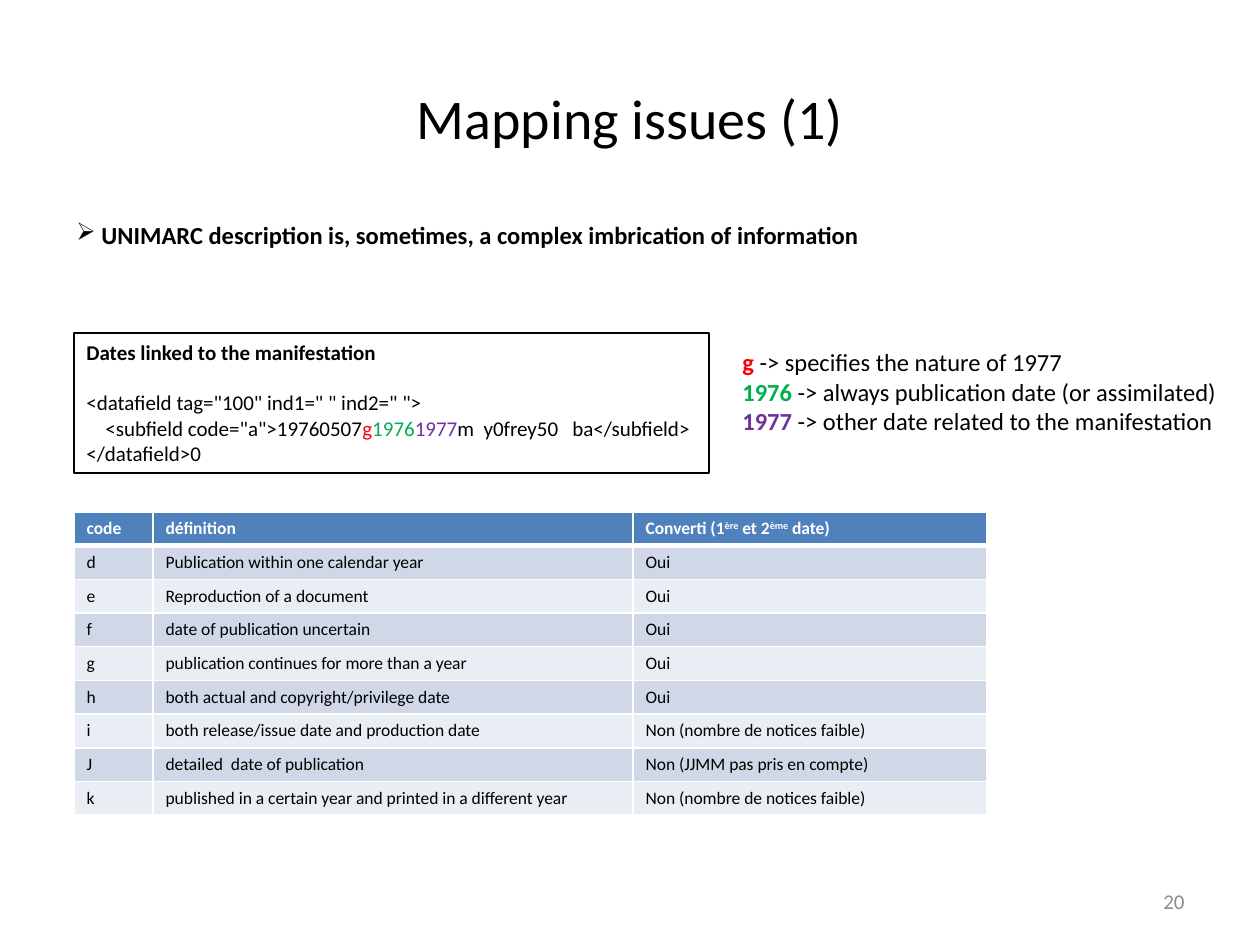
from dataclasses import dataclass

from lxml.etree import SubElement
from pptx import Presentation
from pptx.dml.color import RGBColor as RGB
from pptx.enum.shapes import MSO_SHAPE as Shape
from pptx.enum.text import MSO_ANCHOR as Anchor, PP_ALIGN as Align
from pptx.oxml.ns import qn
from pptx.util import Pt

PX = 914400 // 126


@dataclass(frozen=True)
class Theme:
    font: str = "Calibri"
    black: str = "000000"
    white: str = "FFFFFF"
    grey: str = "8C8C8C"
    red: str = "FF0000"
    green: str = "00B050"
    purple: str = "7030A0"
    header: str = "4F81BD"
    bands: tuple = ("D0D8E8", "E9EDF4")
    title: int = 32
    body: int = 14
    code: int = 12
    cell: int = 10


THEME = Theme()

DATE_CODES = [
    ("d", "Publication within one calendar year", "Oui"),
    ("e", "Reproduction of a document", "Oui"),
    ("f", "date of publication uncertain", "Oui"),
    ("g", "publication continues for more than a year", "Oui"),
    ("h", "both actual and copyright/privilege date", "Oui"),
    ("i", "both release/issue date and production date", "Non (nombre de notices faible)"),
    ("J", "detailed  date of publication", "Non (JJMM pas pris en compte)"),
    ("k", "published in a certain year and printed in a different year",
     "Non (nombre de notices faible)"),
]


def emu(box):
    return [length * PX for length in box]


def set_font(paragraph, size, color=THEME.black, bold=False):
    font = paragraph.font
    font.name, font.size, font.bold = THEME.font, Pt(size), bold
    font.color.rgb = RGB.from_string(color)


def add_runs(paragraph, runs):
    """Add (text, color, bold) runs; None keeps the paragraph's setting."""
    for text, color, bold in runs:
        run = paragraph.add_run()
        run.text = text
        run.font.bold = bold
        if color:
            run.font.color.rgb = RGB.from_string(color)


def add_paragraph(frame, first):
    return frame.paragraphs[0] if first else frame.add_paragraph()


def set_indent(paragraph, left, first=0):
    props = paragraph._p.get_or_add_pPr()
    props.set("marL", str(left * PX))
    props.set("indent", str(first * PX))
    return props


def add_line(slide, box, text, size, color=THEME.black, align=Align.LEFT,
             bold=False, anchor=Anchor.MIDDLE):
    frame = slide.shapes.add_textbox(*emu(box)).text_frame
    frame.word_wrap = True
    frame.vertical_anchor = anchor
    line = frame.paragraphs[0]
    line.text, line.alignment = text, align
    set_font(line, size, color, bold)
    return line


def add_statement(slide, box):
    statement = add_line(
        slide, box, "UNIMARC description is, sometimes, a complex imbrication of information",
        THEME.body, bold=True, anchor=Anchor.TOP)
    statement.space_before = Pt(6)
    bullet = SubElement(set_indent(statement, 25, -25), qn("a:buChar"))
    bullet.set("char", "➢")


def add_record(slide, box):
    record = slide.shapes.add_shape(Shape.RECTANGLE, *emu(box))
    record.shadow.inherit = False
    record.fill.background()
    record.line.color.rgb = RGB.from_string(THEME.black)
    record.line.width = Pt(0.75)
    frame = record.text_frame
    frame.word_wrap = True
    frame.vertical_anchor = Anchor.TOP
    lines = [
        [("Dates linked to the manifestation", None, True)],
        [('<datafield tag="100" ind1=" " ind2=" ">', None, None)],
        [('<subfield code="a">19760507', None, None), ("g", THEME.red, None),
         ("1976", THEME.green, None), ("1977", THEME.purple, None),
         ("m  y0frey50   ba</subfield>", None, None)],
        [("</datafield>0", None, None)],
    ]
    for index, runs in enumerate(lines):
        line = add_paragraph(frame, index == 0)
        line.alignment = Align.LEFT
        set_font(line, THEME.code)
        add_runs(line, runs)
    heading, datafield, subfield, _ = frame.paragraphs
    datafield.space_before = Pt(14.6)  # one line below the heading
    set_indent(subfield, 19)


def add_legend(slide, box):
    frame = slide.shapes.add_textbox(*emu(box)).text_frame
    frame.word_wrap = False
    meanings = [
        ("g", THEME.red, "specifies the nature of 1977"),
        ("1976", THEME.green, "always publication date (or assimilated)"),
        ("1977", THEME.purple, "other date related to the manifestation"),
    ]
    for index, (key, color, meaning) in enumerate(meanings):
        line = add_paragraph(frame, index == 0)
        set_font(line, THEME.body)
        add_runs(line, [(key, color, True), (f" -> {meaning}", None, None)])


def style_cell(cell, fill, color, bold, bottom):
    set_font(cell.text_frame.paragraphs[0], THEME.cell, color, bold)
    props = cell._tc.get_or_add_tcPr()
    for side, width in (("L", 1), ("R", 1), ("T", 1), ("B", bottom)):
        border = SubElement(props, qn(f"a:ln{side}"), w=str(Pt(width)))
        SubElement(SubElement(border, qn("a:solidFill")), qn("a:srgbClr"), val=THEME.white)
    cell.fill.solid()
    cell.fill.fore_color.rgb = RGB.from_string(fill)


def add_code_table(slide, box):
    widths = (79, 480, 354)
    rows = [("code", "définition", "")] + DATE_CODES
    table = slide.shapes.add_table(len(rows), len(widths), *emu(box)).table
    for column, width in zip(table.columns, widths):
        column.width = width * PX
    for r, texts in enumerate(rows):
        header = r == 0
        fill = THEME.header if header else THEME.bands[(r - 1) % 2]
        color = THEME.white if header else THEME.black
        for c, text in enumerate(texts):
            cell = table.cell(r, c)
            cell.text = text
            # The first row shares a thick edge with the row below
            style_cell(cell, fill, color, header, 3 if header else 1)

    # Last heading, with raised ordinals
    converted = table.cell(0, 2).text_frame.paragraphs[0]
    parts = ("Converti (1", "ère", " et 2", "ème", " date)")
    add_runs(converted, [(part, None, None) for part in parts])
    for ordinal in converted.runs[1::2]:
        ordinal.font._element.set("baseline", "30000")


def main():
    deck = Presentation()
    deck.slide_width, deck.slide_height = emu((1260, 945))
    slide = deck.slides.add_slide(deck.slide_layouts[6])

    # Title and page number
    add_line(slide, (63, 38, 1134, 158), "Mapping issues (1)", THEME.title, align=Align.CENTER)
    add_line(slide, (903, 876, 294, 50), "20", THEME.code, THEME.grey, Align.RIGHT)

    # Statement, record and its legend
    add_statement(slide, (64, 214, 1042, 43))
    add_record(slide, (74, 333, 635, 140))
    add_legend(slide, (730, 341, 504, 102))

    # Date codes
    add_code_table(slide, (74, 512, 913, 302))
    deck.save("out.pptx")


if __name__ == "__main__":
    main()
